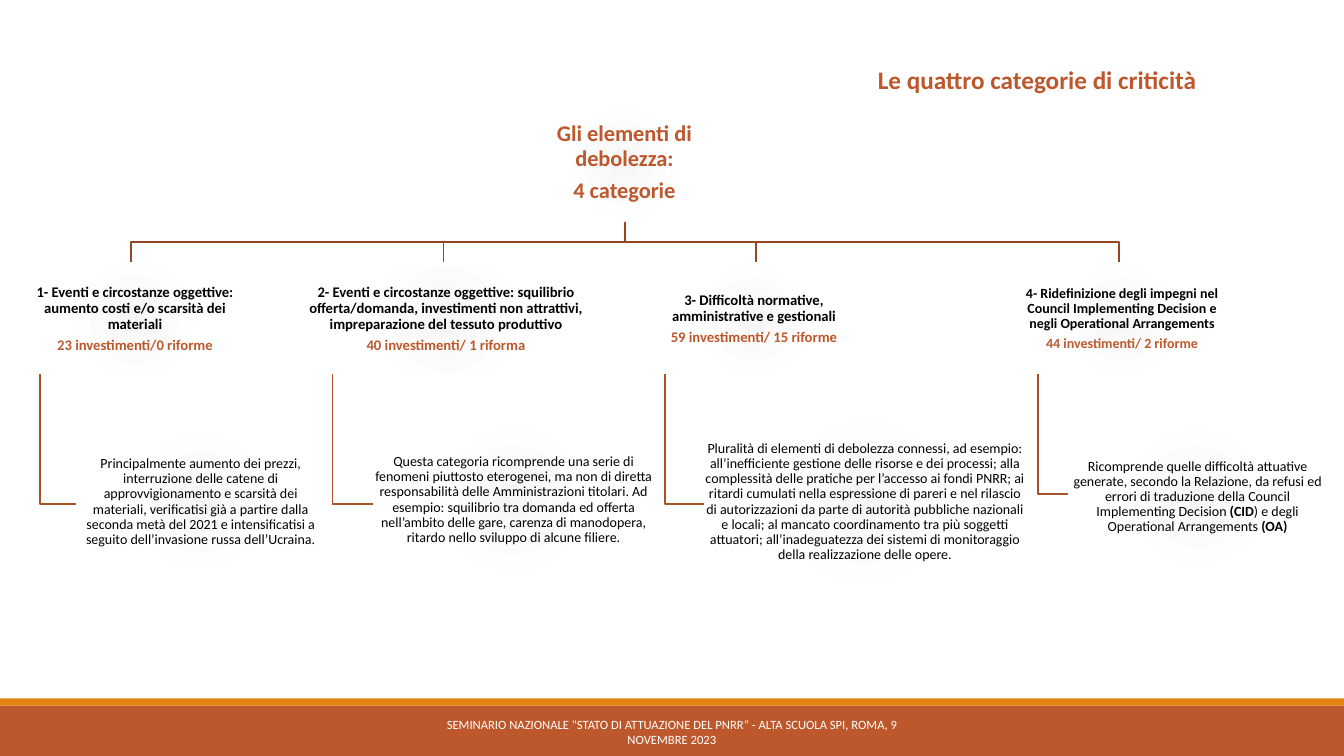
"""Builds a slide with a tree of four categories of weakness and their details."""
from dataclasses import dataclass

from lxml.etree import SubElement
from pptx import Presentation
from pptx.dml.color import RGBColor
from pptx.enum.shapes import MSO_SHAPE
from pptx.enum.text import MSO_ANCHOR, PP_ALIGN
from pptx.oxml.ns import qn
from pptx.util import Inches, Pt

CELL = Inches(0.1)
COLUMNS, ROWS = 133.33, 75
FONT = "Calibri"
RUST, ORANGE, BLACK, WHITE = "BD582C", "E48312", "000000", "FFFFFF"
TRUNK, HOOK = "974623", "AC5028"
GLOW = ((0, "F6F6F6"), (45, "FEFEFE"), (100, "FFFFFF"))
CATEGORY_ROW, CATEGORY_HEIGHT = 26.2, 10.95


@dataclass(frozen=True)
class Area:
    left: float
    top: float
    width: float
    height: float

    @property
    def center(self) -> float:
        return self.left + self.width / 2

    @property
    def middle(self) -> float:
        return self.top + self.height / 2

    @property
    def bottom(self) -> float:
        return self.top + self.height

    def lengths(self) -> list[int]:
        return [round(value * CELL) for value in (self.left, self.top, self.width, self.height)]


@dataclass(frozen=True)
class Line:
    runs: tuple[str, ...]
    size: float
    color: str = BLACK
    bold: bool = False


@dataclass(frozen=True)
class Category:
    left: float
    width: float
    size: float
    heading: str
    count: str
    detail: Area
    explanation: tuple[str, ...]

    @property
    def area(self) -> Area:
        return Area(self.left, CATEGORY_ROW, self.width, CATEGORY_HEIGHT)


ROOT = Area(51.05, 10.7, 21.8, 10.9)
CATEGORIES = (
    Category(1.6, 23.6, 10.5,
             "1- Eventi e circostanze oggettive: aumento costi e/o scarsità dei materiali",
             "23 investimenti/0 riforme", Area(7.5, 41.7, 24.8, 16.2),
             ("Principalmente aumento dei prezzi, interruzione delle catene di approvvigionamento "
              "e scarsità dei materiali, verificatisi già a partire dalla seconda metà del 2021 e "
              "intensificatisi a seguito dell’invasione russa dell’Ucraina.",)),
    Category(29.8, 28.9, 10.5,
             "2- Eventi e circostanze oggettive: squilibrio offerta/domanda, investimenti non "
             "attrattivi, impreparazione del tessuto produttivo",
             "40 investimenti/ 1 riforma", Area(37.1, 41.7, 27.7, 15.8),
             ("Questa categoria ricomprende una serie di fenomeni piuttosto eterogenei, ma non di "
              "diretta responsabilità delle Amministrazioni titolari. Ad esempio: squilibrio tra "
              "domanda ed offerta nell’ambito delle gare, carenza di manodopera, ritardo nello "
              "sviluppo di alcune filiere.",)),
    Category(63.9, 21.8, 10.5,
             "3- Difficoltà normative, amministrative e gestionali",
             "59 investimenti/ 15 riforme", Area(69.8, 41.4, 32, 16.8),
             ("Pluralità di elementi di debolezza connessi, ad esempio: all’inefficiente gestione "
              "delle risorse e dei processi; alla complessità delle pratiche per l’accesso ai fondi "
              "PNRR; ai ritardi cumulati nella espressione di pareri e nel rilascio di "
              "autorizzazioni da parte di autorità pubbliche nazionali e locali; al mancato "
              "coordinamento tra più soggetti attuatori; all’inadeguatezza dei sistemi di "
              "monitoraggio della realizzazione delle opere.",)),
    Category(100.4, 21.8, 10,
             "4- Ridefinizione degli impegni nel Council Implementing Decision e negli "
             "Operational Arrangements",
             "44 investimenti/ 2 riforme", Area(105.9, 41.7, 25.8, 15.2),
             ("Ricomprende quelle difficoltà attuative generate, secondo la Relazione, da refusi "
              "ed errori di traduzione della Council Implementing Decision ", "(CID",
              ") e degli Operational Arrangements ", "(OA)")),
)


def color_of(value: str) -> RGBColor:
    """Return the colour for a hex string."""
    return RGBColor.from_string(value)


def add_rectangle(slide, area: Area):
    """Add a rectangle without line or shadow."""
    shape = slide.shapes.add_shape(MSO_SHAPE.RECTANGLE, *area.lengths())
    shape.shadow.inherit = False
    shape.line.fill.background()
    return shape


def add_bar(slide, area: Area, color: str) -> None:
    """Add a plain band of colour."""
    shape = add_rectangle(slide, area)
    shape.fill.solid()
    shape.fill.fore_color.rgb = color_of(color)


def fill_with_glow(shape) -> None:
    """Fill a shape with a round gradient that fades from its centre."""
    shape.fill.gradient()
    gradient = shape._element.spPr.find(qn("a:gradFill"))
    for child in list(gradient):
        gradient.remove(child)
    stops = SubElement(gradient, qn("a:gsLst"))
    for position, color in GLOW:
        stop = SubElement(stops, qn("a:gs"), pos=str(position * 1000))
        SubElement(stop, qn("a:srgbClr"), val=color)
    circle = SubElement(gradient, qn("a:path"), path="circle")
    SubElement(circle, qn("a:fillToRect"), {side: "50000" for side in "ltrb"})


def write_line(paragraph, line: Line, alignment: PP_ALIGN) -> None:
    """Write a paragraph; every second run is bold when there are several."""
    paragraph.alignment = alignment
    paragraph.font.name = FONT
    paragraph.font.size = Pt(line.size)
    paragraph.font.color.rgb = color_of(line.color)
    paragraph.font.bold = line.bold
    for index, text in enumerate(line.runs):
        run = paragraph.add_run()
        run.text = text
        if index % 2:
            run.font.bold = True


def add_box(slide, area: Area, *lines: Line) -> None:
    """Add a glowing box with centred lines of text."""
    shape = add_rectangle(slide, area)
    fill_with_glow(shape)
    frame = shape.text_frame
    frame.word_wrap = True
    frame.vertical_anchor = MSO_ANCHOR.MIDDLE
    frame.margin_left = frame.margin_right = frame.margin_top = frame.margin_bottom = Inches(0.01)
    for index, line in enumerate(lines):
        paragraph = frame.add_paragraph() if index else frame.paragraphs[0]
        write_line(paragraph, line, PP_ALIGN.CENTER)
        paragraph.line_spacing = 0.9
        paragraph.space_after = Pt(line.size * 0.35)


def add_label(slide, area: Area, line: Line, alignment: PP_ALIGN, anchor: MSO_ANCHOR) -> None:
    """Add a text box with one paragraph."""
    frame = slide.shapes.add_textbox(*area.lengths()).text_frame
    frame.word_wrap = True
    frame.vertical_anchor = anchor
    write_line(frame.paragraphs[0], line, alignment)


def add_branch(slide, color: str, *points: tuple[float, float]) -> None:
    """Add an open angled line through the given grid points."""
    start, *others = points
    builder = slide.shapes.build_freeform(*start, scale=float(CELL))
    builder.add_line_segments(others, close=False)
    shape = builder.convert_to_shape()
    shape.shadow.inherit = False
    shape.fill.background()
    shape.line.color.rgb = color_of(color)
    shape.line.width = Pt(1.25)


def main() -> None:
    """Build and save the slide."""
    presentation = Presentation()
    presentation.slide_width = round(COLUMNS * CELL)
    presentation.slide_height = ROWS * CELL
    slide = presentation.slides.add_slide(presentation.slide_layouts[6])

    add_bar(slide, Area(0, 70, COLUMNS, 5), RUST)
    add_bar(slide, Area(0, 69.3, COLUMNS, 0.7), ORANGE)

    fork = (ROOT.bottom + CATEGORY_ROW) / 2
    for category in CATEGORIES:
        area, detail = category.area, category.detail
        hook = area.left + area.width / 10
        add_branch(slide, HOOK, (hook, area.bottom), (hook, detail.middle),
                   (detail.left, detail.middle))
        add_branch(slide, TRUNK, (ROOT.center, ROOT.bottom), (ROOT.center, fork),
                   (area.center, fork), (area.center, area.top))

    add_box(slide, ROOT, Line(("Gli elementi di debolezza:",), 16, RUST, True),
            Line(("4 categorie",), 16, RUST, True))
    for category in CATEGORIES:
        add_box(slide, category.area, Line((category.heading,), category.size, bold=True),
                Line((category.count,), category.size, RUST, True))
        add_box(slide, category.detail, Line(category.explanation, 10))

    add_label(slide, Area(86.1, 5.9, 38.3, 4),
              Line(("Le quattro categorie di criticità",), 18, RUST, True),
              PP_ALIGN.LEFT, MSO_ANCHOR.TOP)
    add_label(slide, Area(40.3, 70.6, 52.7, 4),
              Line(("SEMINARIO NAZIONALE \"STATO DI ATTUAZIONE DEL PNRR” - "
                    "ALTA SCUOLA SPI, ROMA, 9 NOVEMBRE 2023",), 9, WHITE),
              PP_ALIGN.CENTER, MSO_ANCHOR.MIDDLE)
    presentation.save("out.pptx")


if __name__ == "__main__":
    main()
